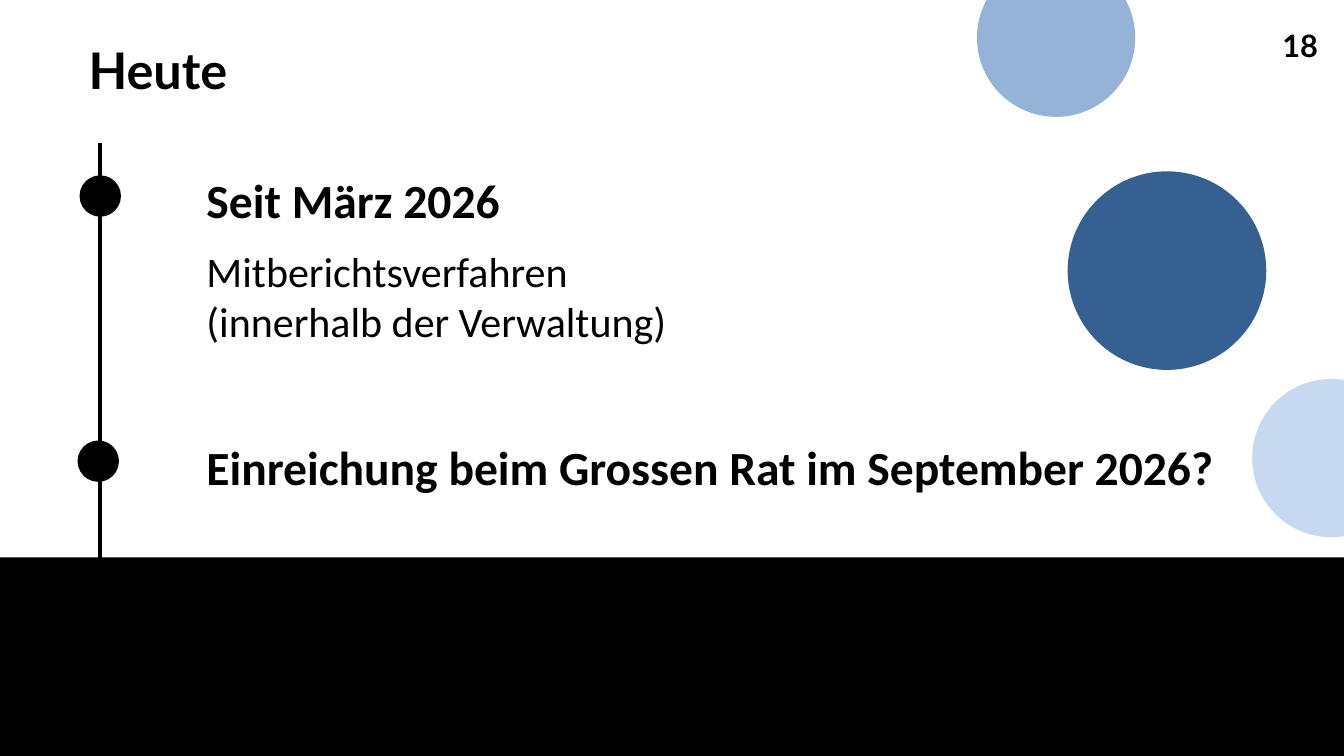
from lxml.etree import SubElement
from pptx import Presentation
from pptx.dml.color import RGBColor
from pptx.enum.shapes import MSO_CONNECTOR, MSO_SHAPE
from pptx.enum.text import MSO_ANCHOR
from pptx.oxml.ns import qn
from pptx.util import Inches, Pt

WIDTH, HEIGHT = Inches(13.33), Inches(7.5)
BLACK = "000000"

# Shared positions, in percent of the slide's width or height
HEADER_TOP = 2.93
ENTRY_LEFT = 14.63
AXIS_X = 7.43
BAND_TOP = 73.73
DOT_SIZE = 3.08


def across(percent):
    return int(WIDTH * percent / 100)


def down(percent):
    return int(HEIGHT * percent / 100)


def color(hex_code):
    return RGBColor.from_string(hex_code)


def add_filled(slide, preset, left, top, width, height, fill):
    area = slide.shapes.add_shape(preset, left, top, width, height)
    area.shadow.inherit = False
    area.fill.solid()
    area.fill.fore_color.rgb = color(fill)
    area.line.fill.background()


def add_circle(slide, center_x, center_y, diameter, fill):
    """Place a circle by its centre; the diameter is a share of the width."""
    size = across(diameter)
    add_filled(slide, MSO_SHAPE.OVAL, across(center_x) - size // 2,
               down(center_y) - size // 2, size, size, fill)


def add_axis(slide, x, top, bottom):
    axis = slide.shapes.add_connector(
        MSO_CONNECTOR.STRAIGHT, across(x), down(top), across(x), down(bottom))
    axis.line.color.rgb = color(BLACK)
    axis.line.width = Pt(3)
    SubElement(axis._element.spPr, qn("a:effectLst"))


def add_text(slide, box, lines, font, spacing=1.0, anchor=MSO_ANCHOR.TOP):
    """Write lines of (text, size, bold) into a box of percentages."""
    left, top, width, height = box
    frame = slide.shapes.add_textbox(
        across(left), down(top), across(width), down(height)).text_frame
    frame.word_wrap = True
    frame.vertical_anchor = anchor
    for index, (text, size, bold) in enumerate(lines):
        paragraph = frame.add_paragraph() if index else frame.paragraphs[0]
        paragraph.text = text
        paragraph.line_spacing = spacing
        if index:
            paragraph.space_before = Pt(12)
        for run in paragraph.runs:
            run.font.name = font
            run.font.size = Pt(size)
            run.font.bold = bold
            run.font.color.rgb = color(BLACK)


def main():
    deck = Presentation()
    deck.slide_width, deck.slide_height = WIDTH, HEIGHT
    slide = deck.slides.add_slide(deck.slide_layouts[6])

    # Footer band
    add_filled(slide, MSO_SHAPE.RECTANGLE, 0, down(BAND_TOP), WIDTH,
               HEIGHT - down(BAND_TOP), BLACK)

    # Title and page number
    add_text(slide, (5.85, HEADER_TOP, 89.27, 13.47), [("Heute", 36, True)],
             "Lato", 0.9, MSO_ANCHOR.MIDDLE)
    add_text(slide, (94.67, HEADER_TOP, 4.5, 13.73), [("18", 22, True)], "Lato")

    # Timeline with its two dots
    add_axis(slide, AXIS_X, 18.93, 100)
    for dot_x, dot_y in [(7.46, 25.93), (7.31, 61)]:
        add_circle(slide, dot_x, dot_y, DOT_SIZE, BLACK)

    # Timeline entries
    add_text(slide, (ENTRY_LEFT, 22, 63.17, 25.2),
             [("Seit März 2026", 34, True),
              ("Mitberichtsverfahren\v(innerhalb der Verwaltung)", 30, False)],
             "Calibri")
    add_text(slide, (ENTRY_LEFT, 56.53, 82.9, 19.47),
             [("Einreichung beim Grossen Rat im September 2026?", 34, True)],
             "Calibri", 1.1)

    # Decorative circles
    for center_x, center_y, diameter, fill in [
            (78.58, 5, 11.78, "95B3D7"),
            (86.83, 35.8, 14.78, "376092"),
            (99.06, 60.6, 11.78, "C6D9F1")]:
        add_circle(slide, center_x, center_y, diameter, fill)

    deck.save("out.pptx")


if __name__ == "__main__":
    main()
